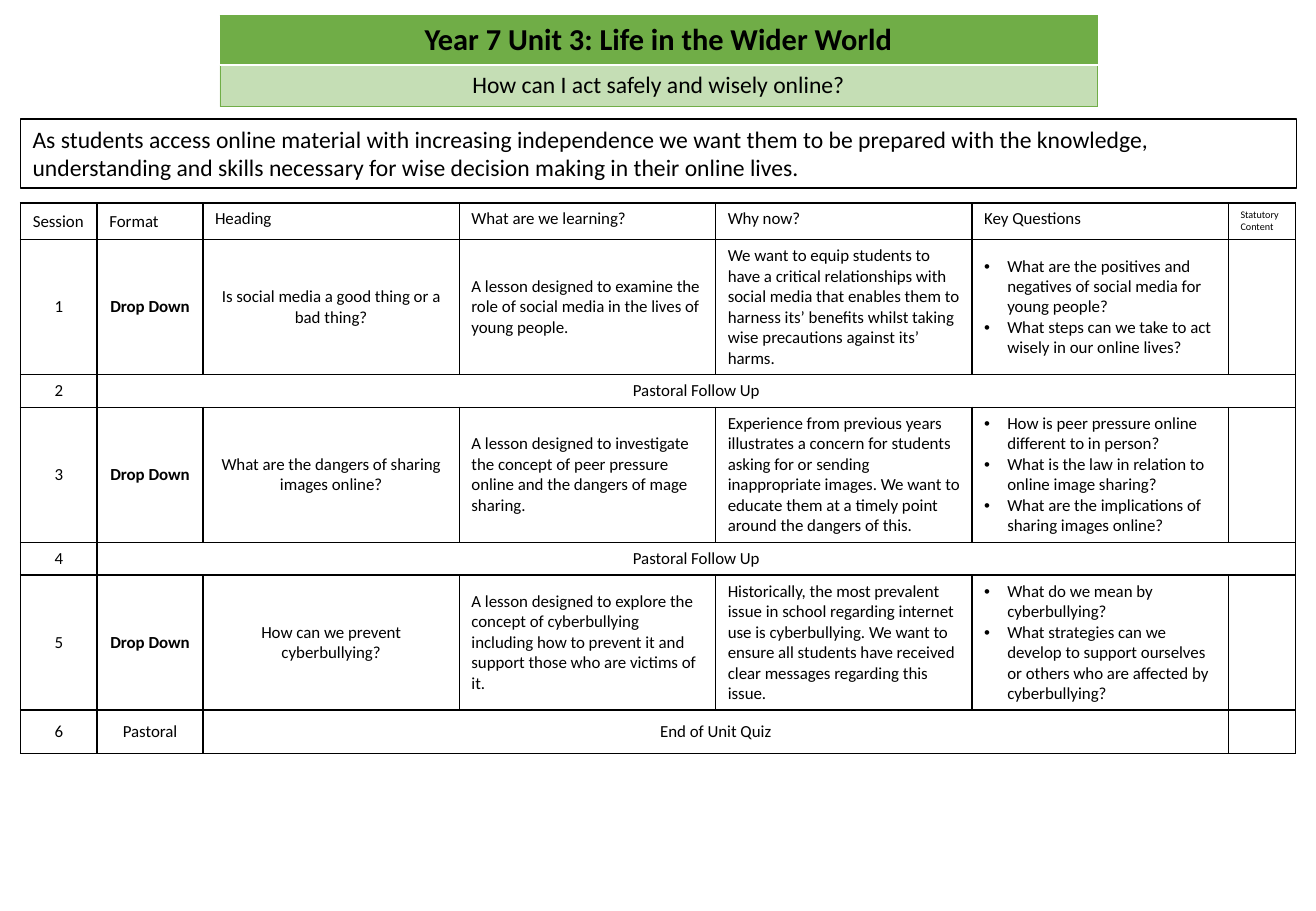
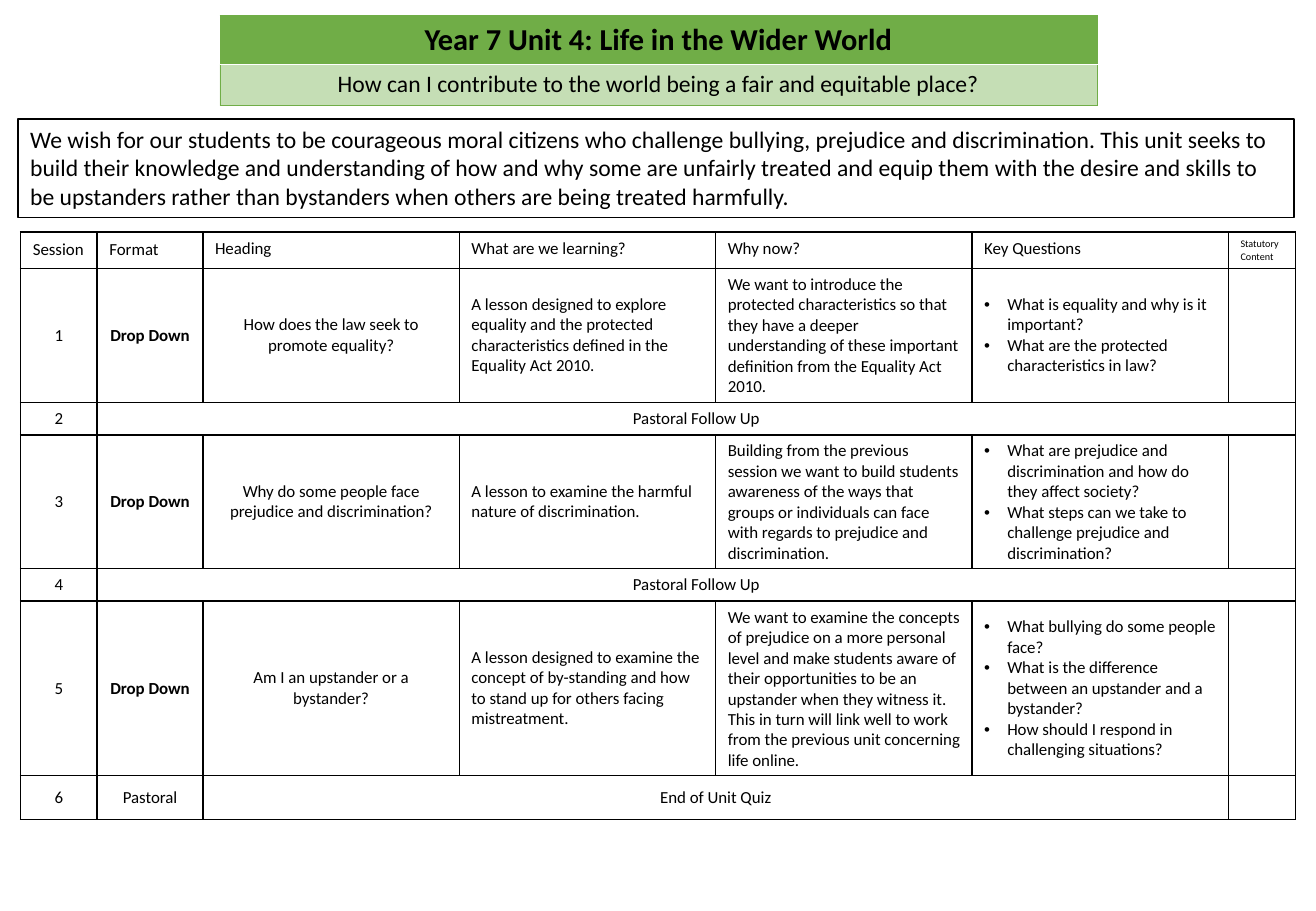
from pptx import Presentation
from pptx.dml.color import RGBColor
from pptx.enum.shapes import MSO_SHAPE
from pptx.enum.text import MSO_ANCHOR, MSO_AUTO_SIZE, PP_ALIGN
from pptx.oxml.ns import qn
from pptx.util import Emu, Inches, Pt
from lxml.etree import SubElement

FONT = "Calibri"
BLACK, WHITE, GREEN = "000000", "FFFFFF", "70AD47"
LEFT, CENTER = PP_ALIGN.LEFT, PP_ALIGN.CENTER
TOP, MIDDLE = MSO_ANCHOR.TOP, MSO_ANCHOR.MIDDLE

COLUMN_WIDTHS = [0.63, 0.87, 2.11, 2.11, 2.11, 2.11, 0.55]
ROW_HEIGHTS = [0.25, 0.73, 0.25, 0.89, 0.25, 1.04, 0.36]
HEADINGS = ["Session", "Format", "Heading", "What are we learning?",
            "Why now?", "Key Questions", "Statutory Content"]
BULLET_INDENT = Inches(0.19)

UNITS = [
    {
        "title": "Year 7 Unit 3: Life in the Wider World",
        "question": "How can I act safely and wisely online?",
        "intro": "As students access online material with increasing independence we want them to be "
                 "prepared with the knowledge, understanding and skills necessary for wise decision "
                 "making in their online lives.",
        "intro_box": (0.17, 0.98, 10.5, 0.57),
        "plan_top": 1.67,
        "lessons": [
            ("Is social media a good thing or a bad thing?",
             "A lesson designed to examine the role of social media in the lives of young people.",
             "We want to equip students to have a critical relationships with social media that "
             "enables them to harness its’ benefits whilst taking wise precautions against its’ harms.",
             ["What are the positives and negatives of social media for young people?",
              "What steps can we take to act wisely in our online lives?"]),
            ("What are the dangers of sharing images online?",
             "A lesson designed to investigate the concept of peer pressure online and the dangers "
             "of mage sharing.",
             "Experience from previous years illustrates a concern for students asking for or sending "
             "inappropriate images. We want to educate them at a timely point around the dangers of this.",
             ["How is peer pressure online different to in person?",
              "What is the law in relation to online image sharing?",
              "What are the implications of sharing images online?"]),
            ("How can we prevent cyberbullying?",
             "A lesson designed to explore the concept of cyberbullying including how to prevent it "
             "and support those who are victims of it.",
             "Historically, the most prevalent issue in school regarding internet use is cyberbullying. "
             "We want to ensure all students have received clear messages regarding this issue.",
             ["What do we mean by cyberbullying?",
              "What strategies can we develop to support ourselves or others who are affected by "
              "cyberbullying?"]),
        ],
    },
    {
        "title": "Year 7 Unit 4: Life in the Wider World",
        "question": "How can I contribute to the world being a fair and equitable place?",
        "intro": "We wish for our students to be courageous moral citizens who challenge bullying, "
                 "prejudice and discrimination. This unit seeks to build their knowledge and "
                 "understanding of how and why some are unfairly treated and equip them with the desire "
                 "and skills to be upstanders rather than bystanders when others are being treated "
                 "harmfully.",
        "intro_box": (0.15, 0.98, 10.5, 0.81),
        "plan_top": 1.91,
        "lessons": [
            ("How does the law seek to promote equality?",
             "A lesson designed to explore equality and the protected characteristics defined in the "
             "Equality Act 2010.",
             "We want to introduce the protected characteristics so that they have a deeper "
             "understanding of these important definition from the Equality Act 2010.",
             ["What is equality and why is it important?",
              "What are the protected characteristics in law?"]),
            ("Why do some people face prejudice and discrimination?",
             "A lesson to examine the harmful nature of discrimination.",
             "Building from the previous session we want to build students awareness of the ways that "
             "groups or individuals can face with regards to prejudice and discrimination.",
             ["What are prejudice and discrimination and how do they affect society?",
              "What steps can we take to challenge prejudice and discrimination?"]),
            ("Am I an upstander or a bystander?",
             "A lesson designed to examine the concept of by-standing and how to stand up for others "
             "facing mistreatment.",
             "We want to examine the concepts of prejudice on a more personal level and make students "
             "aware of their opportunities to be an upstander when they witness it. This in turn will "
             "link well to work from the previous unit concerning life online.",
             ["What bullying do some people face?",
              "What is the difference between an upstander and a bystander?",
              "How should I respond in challenging situations?"]),
        ],
    },
]


def color(value):
    """Turn a hex string into a colour."""
    return RGBColor.from_string(value)


def add_text(paragraph, text, size, bold=False, align=LEFT):
    """Add one styled run to a paragraph."""
    paragraph.alignment = align
    run = paragraph.add_run()
    run.text = text
    run.font.name = FONT
    run.font.size = Pt(size)
    run.font.bold = bold
    run.font.color.rgb = color(BLACK)


def add_bullet(paragraph):
    """Give a paragraph a hanging bullet."""
    properties = paragraph._p.get_or_add_pPr()
    properties.set("marL", str(BULLET_INDENT))
    properties.set("indent", str(-BULLET_INDENT))
    SubElement(properties, qn("a:buFont"), typeface="Arial")
    SubElement(properties, qn("a:buChar"), char="•")


def set_borders(cell, **sides):
    """Draw the L, R, T and B borders given as (colour, points)."""
    properties = cell._tc.get_or_add_tcPr()
    for side in "LRTB":
        hex_value, width = sides[side]
        line = SubElement(properties, qn(f"a:ln{side}"), w=str(Pt(width)))
        fill = SubElement(line, qn("a:solidFill"))
        SubElement(fill, qn("a:srgbClr"), val=hex_value)


def add_grid(slide, left, top, widths, heights):
    """Add an unbanded table with the given column and row sizes."""
    table = slide.shapes.add_table(len(heights), len(widths), Inches(left), Inches(top),
                                   Inches(sum(widths)), Inches(sum(heights))).table
    table.first_row = table.horz_banding = False
    for column, width in zip(table.columns, widths):
        column.width = Inches(width)
    for row, height in zip(table.rows, heights):
        row.height = Inches(height)
    return table


def add_banner(slide, title, question):
    """Add the green title and question bands."""
    banner = add_grid(slide, 1.81, 0.13, [7.22], [0.4, 0.33])
    edge, divider = (GREEN, 0.5), (WHITE, 1)
    bands = [(title, 18, True, edge, divider), (question, 14, False, divider, edge)]
    for row, (text, size, bold, upper, lower) in enumerate(bands):
        band = banner.cell(row, 0)
        set_borders(band, L=edge, R=edge, T=upper, B=lower)
        band.fill.solid()
        band.fill.fore_color.rgb = color(GREEN)
        add_text(band.text_frame.paragraphs[0], text, size, bold, CENTER)
    tint = band._tc.tcPr.find(qn("a:solidFill")).find(qn("a:srgbClr"))
    SubElement(tint, qn("a:alpha"), val="40000")


def add_intro(slide, text, box):
    """Add the outlined introduction to the unit."""
    intro = slide.shapes.add_shape(MSO_SHAPE.RECTANGLE, *map(Inches, box))
    intro.shadow.inherit = False
    intro.fill.solid()
    intro.fill.fore_color.rgb = color(WHITE)
    intro.line.color.rgb = color(BLACK)
    intro.line.width = Pt(1)
    frame = intro.text_frame
    frame.word_wrap = True
    frame.auto_size = MSO_AUTO_SIZE.SHAPE_TO_FIT_TEXT
    frame.vertical_anchor = TOP
    add_text(frame.paragraphs[0], text, 14)


def fill_cell(cell, text, size=10, bold=False, align=LEFT, anchor=MIDDLE):
    """Write one text, or a bulleted list of texts, into a cell."""
    cell.vertical_anchor = anchor
    frame = cell.text_frame
    bulleted = isinstance(text, list)
    for index, line in enumerate(text if bulleted else [text]):
        paragraph = frame.add_paragraph() if index else frame.paragraphs[0]
        add_text(paragraph, line, size, bold, align)
        if bulleted:
            add_bullet(paragraph)


def fill_span(plan, row, first, last, text):
    """Merge part of a row and centre a text in it."""
    plan.cell(row, first).merge(plan.cell(row, last))
    fill_cell(plan.cell(row, first), text, align=CENTER)


def fill_lesson(plan, row, lesson):
    """Write a drop down lesson into its row."""
    heading, learning, reason, questions = lesson
    fill_cell(plan.cell(row, 1), "Drop Down", bold=True, align=CENTER)
    fill_cell(plan.cell(row, 2), heading, align=CENTER)
    for column, text in enumerate([learning, reason, questions], 3):
        fill_cell(plan.cell(row, column), text)


def add_plan(slide, top, lessons):
    """Add the session plan of a unit."""
    plan = add_grid(slide, 0.17, top, COLUMN_WIDTHS, ROW_HEIGHTS)
    rule = (BLACK, 1)
    for cell in plan.iter_cells():
        set_borders(cell, L=rule, R=rule, T=rule, B=rule)
        cell.fill.background()
    for column, heading in enumerate(HEADINGS):
        fill_cell(plan.cell(0, column), heading, size=6 if column == 6 else 10,
                  anchor=MIDDLE if column < 2 else TOP)
    for session in range(1, 7):
        fill_cell(plan.cell(session, 0), str(session), align=CENTER)
    for index, lesson in enumerate(lessons):
        fill_lesson(plan, 2 * index + 1, lesson)
    for row in (2, 4):
        fill_span(plan, row, 1, 6, "Pastoral Follow Up")
    fill_cell(plan.cell(6, 1), "Pastoral", align=CENTER)
    fill_span(plan, 6, 2, 5, "End of Unit Quiz")
    for cell in plan.iter_cells():
        if not cell.text:
            SubElement(cell.text_frame.paragraphs[0]._p, qn("a:endParaRPr"), sz="1000")


def main():
    """Build one slide for each unit."""
    deck = Presentation()
    deck.slide_width, deck.slide_height = Inches(10.83), Inches(7.5)
    for unit in UNITS:
        slide = deck.slides.add_slide(deck.slide_layouts[6])
        add_banner(slide, unit["title"], unit["question"])
        add_plan(slide, unit["plan_top"], unit["lessons"])
        add_intro(slide, unit["intro"], unit["intro_box"])
    deck.save("out.pptx")


if __name__ == "__main__":
    main()
